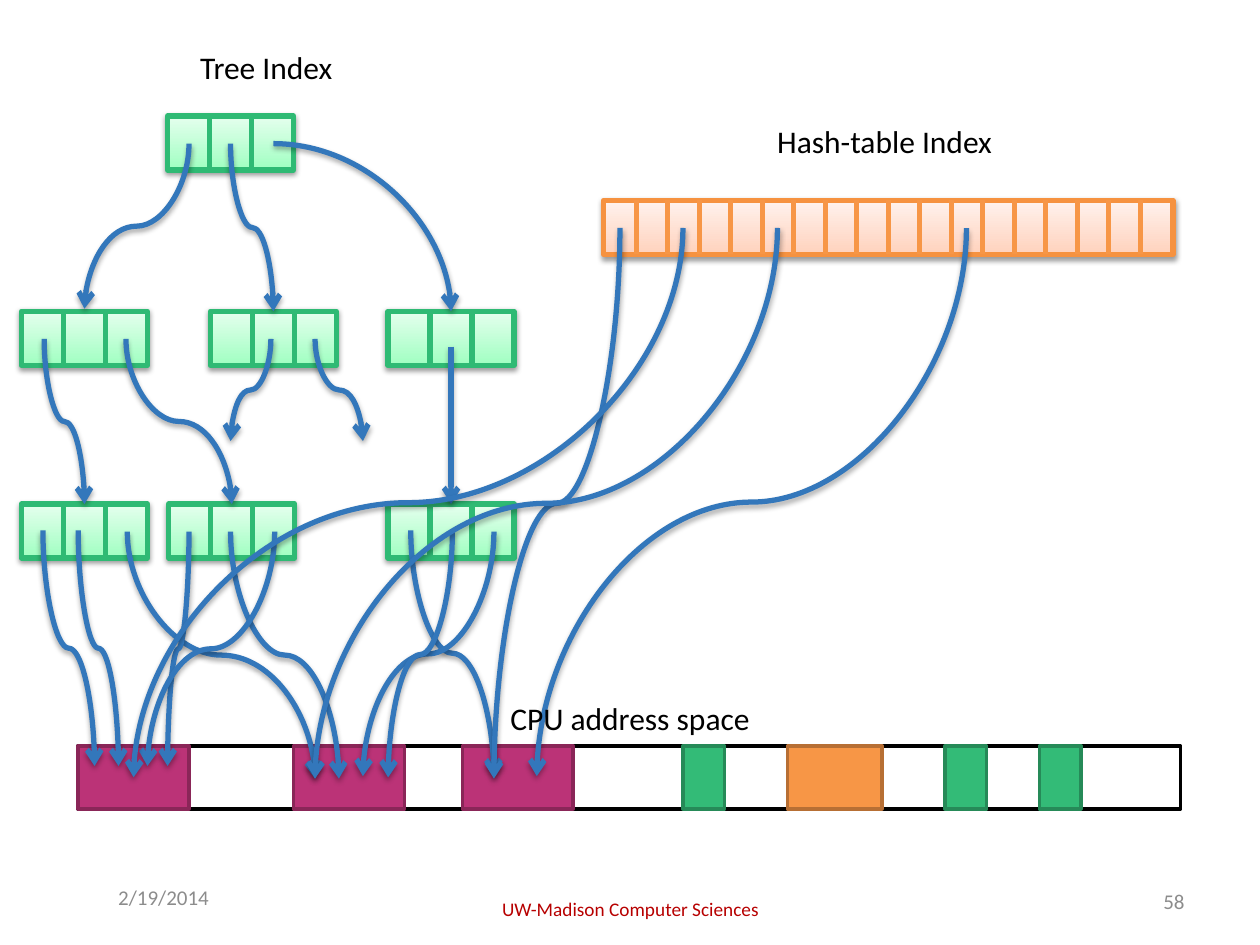
from dataclasses import dataclass

from pptx import Presentation
from pptx.dml.color import RGBColor
from pptx.enum.shapes import MSO_CONNECTOR, MSO_SHAPE
from pptx.enum.text import MSO_ANCHOR, PP_ALIGN
from pptx.oxml import parse_xml
from pptx.oxml.ns import nsdecls, qn
from pptx.util import Inches, Pt

RECT = MSO_SHAPE.RECTANGLE
STRAIGHT, CURVE = MSO_CONNECTOR.STRAIGHT, MSO_CONNECTOR.CURVE
LEFT, CENTER, RIGHT = PP_ALIGN.LEFT, PP_ALIGN.CENTER, PP_ALIGN.RIGHT
TOP, MIDDLE = MSO_ANCHOR.TOP, MSO_ANCHOR.MIDDLE


@dataclass(frozen=True)
class Theme:
    """Colours, type sizes and line widths of the slide."""
    font: str = "Calibri"
    label: int = 18
    footer: int = 12
    source: int = 11
    black: str = "000000"
    white: str = "FFFFFF"
    gray: str = "8C8C8C"
    red: str = "B70000"
    arrow: str = "3377BB"
    tree_line: str = "2FBA74"
    tree_fill: tuple = ("A0FFC1", "E5FFEE")
    hash_line: str = "F69240"
    hash_divider: str = "F79646"
    hash_fill: tuple = ("FFD2BD", "FFF2ED")
    record: tuple = ("BB3377", "8A2658")
    tree_page: tuple = ("33BB77", "268A58")
    hash_page: tuple = ("F79646", "B76F34")
    thin: int = 2
    thick: int = 3


THEME = Theme()
CELL_H = 0.43
NODE_W = 1
MEMORY_Y, MEMORY_H = 5.92, 0.5
HASH_X, HASH_Y, HASH_W = 4.79, 1.59, 4.52
NODES = [(1.33, 0.92), (0.17, 2.47), (1.67, 2.47), (3.08, 2.47),
         (0.17, 4), (1.34, 4), (3.08, 4)]
SEGMENTS = [
    (0.62, 0.88, THEME.record), (2.33, 0.88, THEME.record),
    (3.67, 0.88, THEME.record), (5.42, 0.33, THEME.tree_page),
    (7.5, 0.33, THEME.tree_page), (8.25, 0.33, THEME.tree_page),
    (6.25, 0.75, THEME.hash_page),
]
TREE_POINTERS = [
    (1.5, 1.14, 0.67, 2.45), (1.83, 1.14, 2.17, 2.47),
    (2.5, 2.69, 2.88, 3.5), (2.15, 2.69, 1.83, 3.5),
    (0.35, 2.69, 0.67, 4), (1, 2.69, 1.84, 4), (3.58, 2.75, 3.58, 4),
    (0.34, 4.21, 0.75, 6.08), (0.62, 4.21, 0.94, 6.08),
    (1.01, 4.22, 2.5, 6.18), (1.5, 4.22, 1.33, 6.08),
    (1.83, 4.22, 2.69, 6.18), (2.18, 4.22, 1.17, 6.08),
    (3.26, 4.21, 3.92, 6.16), (3.92, 4.22, 2.88, 6.16),
    (3.59, 4.22, 3.08, 6.17),
]
HASH_POINTERS = [(4.92, 1.81, 3.92, 6.18), (6.17, 1.81, 2.5, 6.18),
                 (5.42, 1.81, 1.06, 6.17), (7.67, 1.81, 4.26, 6.16)]


def rgb(color):
    """Return a colour object for a hex string."""
    return RGBColor.from_string(color)


def set_line(shape, color, width):
    """Give a shape or connector a solid line."""
    shape.line.color.rgb = rgb(color)
    shape.line.width = Pt(width)


def set_shadow(shape, alpha=0, dist=0):
    """Set a soft shadow below a shape, or none when alpha is zero."""
    shadow = (f'<a:outerShdw blurRad="40000" dist="{dist}" dir="5400000" '
              f'rotWithShape="0"><a:srgbClr val="{THEME.black}">'
              f'<a:alpha val="{alpha * 1000}"/></a:srgbClr></a:outerShdw>')
    shape._element.spPr.append(parse_xml(
        f'<a:effectLst {nsdecls("a")}>{shadow if alpha else ""}</a:effectLst>'))


def add_text(s, text, x, y, w, size, color, align=LEFT, anchor=TOP, wrap=True):
    """Add a one-line text box."""
    tf = s.shapes.add_textbox(Inches(x), Inches(y), Inches(w), Inches(0.4)).text_frame
    tf.word_wrap = wrap
    tf.vertical_anchor = anchor
    p = tf.paragraphs[0]
    p.text = text
    p.alignment = align
    p.font.name = THEME.font
    p.font.size = Pt(size)
    p.font.color.rgb = rgb(color)


def add_box(s, x, y, w, h):
    """Add a bare rectangle."""
    return s.shapes.add_shape(RECT, Inches(x), Inches(y), Inches(w), Inches(h))


def add_segment(s, x, w, colors):
    """Add a flat block of the address space."""
    sp = add_box(s, x, MEMORY_Y, w, MEMORY_H)
    fill, line = colors
    sp.fill.solid()
    sp.fill.fore_color.rgb = rgb(fill)
    set_line(sp, line, THEME.thin)
    set_shadow(sp)


def add_cells(s, x, y, w, dividers, fill, line, divider_line):
    """Add a gradient box split by vertical dividers."""
    sp = add_box(s, x, y, w, CELL_H)
    sp.fill.gradient()
    sp.fill.gradient_angle = 90
    for stop, color in zip(sp.fill.gradient_stops, fill):
        stop.color.rgb = rgb(color)
    set_line(sp, line, THEME.thick)
    set_shadow(sp, 38, 20000)
    for dx in dividers:
        cx = s.shapes.add_connector(STRAIGHT, Inches(dx), Inches(y),
                                    Inches(dx), Inches(y + CELL_H))
        set_line(cx, divider_line, THEME.thick)
        set_shadow(cx)


def add_curve(s, x1, y1, x2, y2):
    """Add a curved arrow between two points."""
    cx = s.shapes.add_connector(CURVE, Inches(x1), Inches(y1), Inches(x2), Inches(y2))
    set_line(cx, THEME.arrow, THEME.thick)
    cx._element.spPr.find(qn("a:ln")).append(
        parse_xml(f'<a:tailEnd {nsdecls("a")} type="arrow"/>'))
    set_shadow(cx, 35, 23000)
    return cx


def add_pointer(s, x1, y1, x2, y2):
    """Add an S-shaped arrow that leaves and arrives vertically."""
    length, spread = y2 - y1, abs(x2 - x1)
    left, right = (x1 + x2 - length) / 2, (x1 + x2 + length) / 2
    top, bottom = (y1 + y2 - spread) / 2, (y1 + y2 + spread) / 2
    start, end, angle = (right, left, 270) if x2 > x1 else (left, right, 90)
    cx = add_curve(s, start, top, end, bottom)
    cx._element.spPr.find(qn("a:xfrm")).set("rot", str(angle * 60000))


def add_quarter_pointer(s, x1, y1, x2, y2):
    """Add an arrow that leaves sideways and arrives from above."""
    cx = add_curve(s, x1, y1, x2, y2)
    cx._element.spPr.find(qn("a:prstGeom")).set("prst", "curvedConnector2")


def add_tree(s):
    """Add the tree nodes and their pointers."""
    for x, y in NODES:
        dividers = [x + NODE_W * i / 3 for i in (1, 2)]
        add_cells(s, x, y, NODE_W, dividers, THEME.tree_fill,
                  THEME.tree_line, THEME.tree_line)
    add_quarter_pointer(s, 2.17, 1.14, 3.58, 2.47)
    for pointer in TREE_POINTERS:
        add_pointer(s, *pointer)


def add_hash_table(s):
    """Add the hash table and its pointers."""
    dividers = [5.05 + 0.25 * i for i in range(17)]
    add_cells(s, HASH_X, HASH_Y, HASH_W, dividers, THEME.hash_fill,
              THEME.hash_line, THEME.hash_divider)
    for pointer in HASH_POINTERS:
        add_pointer(s, *pointer)


def main():
    """Build and save the slide."""
    prs = Presentation()
    prs.slide_width, prs.slide_height = Inches(10), Inches(7.5)
    s = prs.slides.add_slide(prs.slide_layouts[6])
    add_text(s, "2/19/2014", 0.84, 6.92, 1.66, THEME.footer, THEME.gray, anchor=MIDDLE)
    add_text(s, "UW-Madison Computer Sciences", 3.42, 7.01, 3.17, THEME.source,
             THEME.red, CENTER, MIDDLE)
    add_text(s, "58", 7.17, 6.95, 2.33, THEME.footer, THEME.gray, RIGHT, MIDDLE)
    add_segment(s, 0.62, 8.75, (THEME.white, THEME.black))
    for segment in SEGMENTS:
        add_segment(s, *segment)
    add_tree(s)
    add_hash_table(s)
    for text, x, y, w, align in [("Tree Index", 1.49, 0.33, 1.26, LEFT),
                                 ("Hash-table Index", 6.07, 0.92, 1.93, LEFT),
                                 ("CPU address space", 3.94, 5.5, 2.12, CENTER)]:
        add_text(s, text, x, y, w, THEME.label, THEME.black, align, wrap=False)
    prs.save("out.pptx")


if __name__ == "__main__":
    main()
